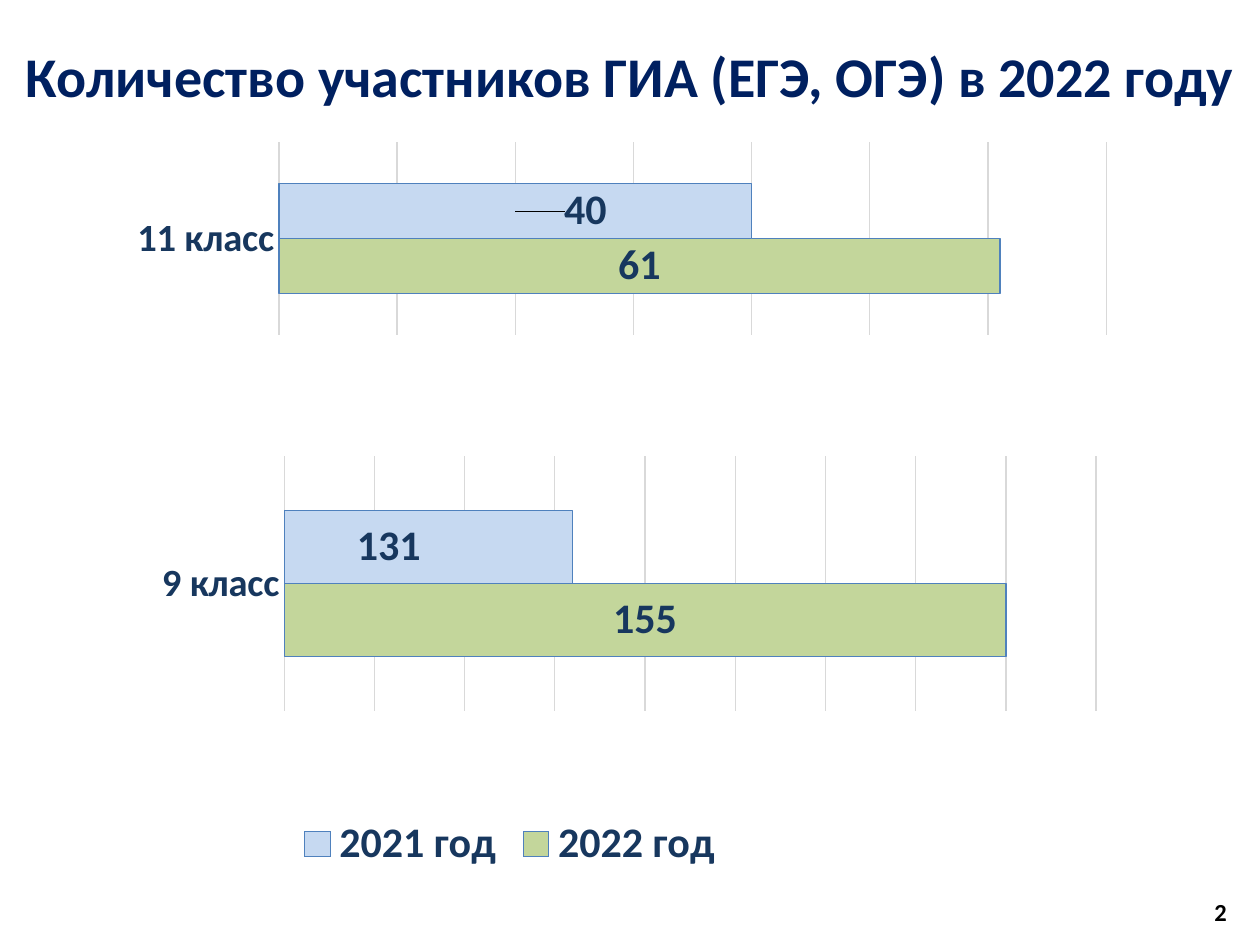
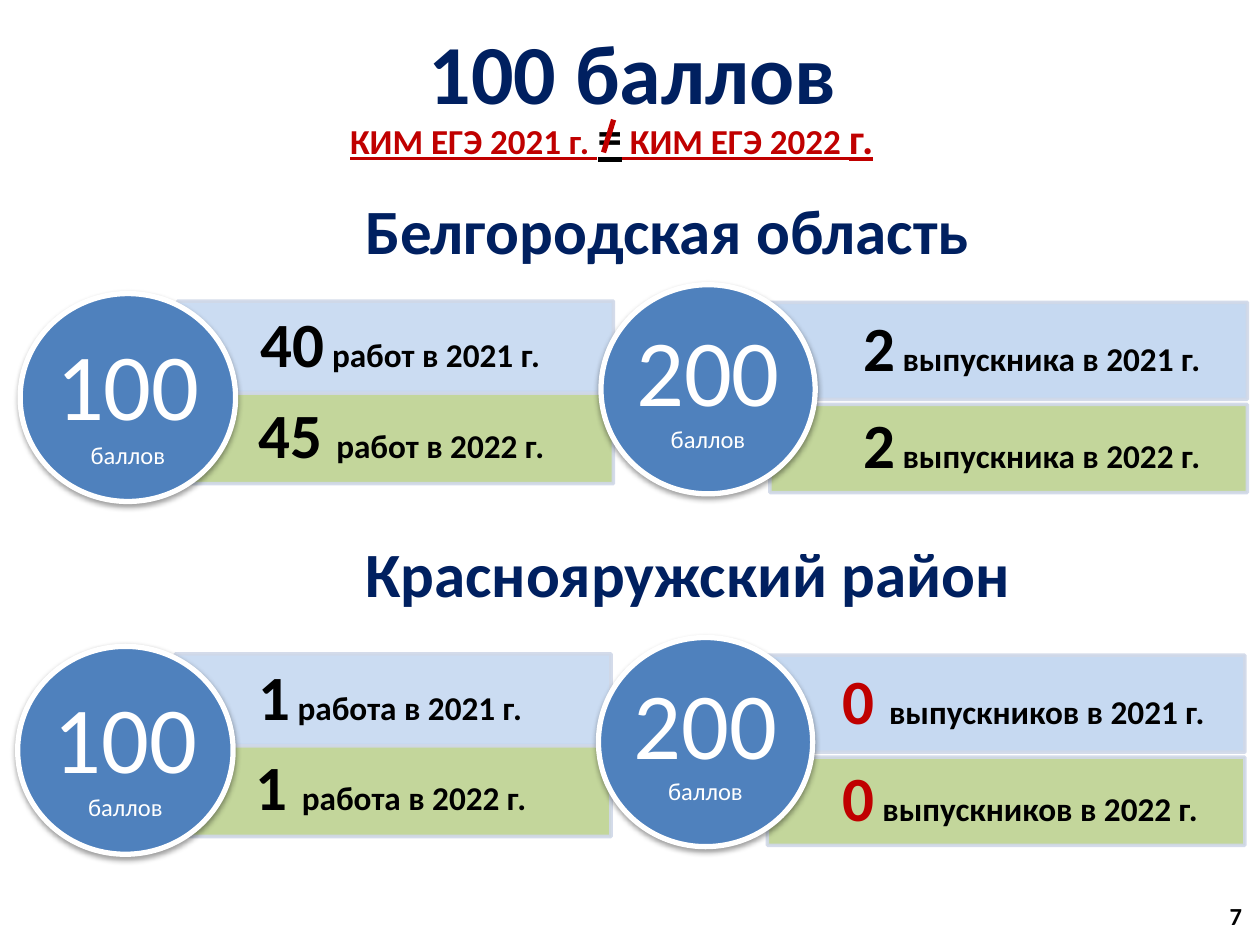
from lxml import etree
from pptx import Presentation
from pptx import util as u
from pptx.chart import data as chart_data
from pptx.dml import color as dml
from pptx.enum import chart as chart_enum
from pptx.enum import shapes, text
from pptx.oxml import parse_xml
from pptx.oxml.ns import nsdecls, qn

FONT = "Calibri"
COLOURS = {
    "navy": "002060",
    "ink": "17375E",
    "black": "000000",
    "white": "FFFFFF",
    "red": "C00000",
    "blue": "4F81BD",
    "pale_blue": "C6D9F1",
    "green": "C3D69B",
    "edge": "D0D8E8",
    "grid": "D9D9D9",
}
LEFT, CENTRE = text.PP_ALIGN.LEFT, text.PP_ALIGN.CENTER


def rgb(name):
    return dml.RGBColor.from_string(COLOURS[name])


def format_font(font, size, colour="black", bold=True, underline=False):
    font.name = FONT
    font.size = u.Pt(size)
    font.bold = bold
    font.color.rgb = rgb(colour)
    if underline:
        font.underline = True


def add_span(para, words, **style):
    span = para.add_run()
    span.text = words
    format_font(span.font, **style)


def set_alpha(fill_owner, percent):
    for colour in fill_owner.iter(qn("a:srgbClr")):
        etree.SubElement(colour, qn("a:alpha"), val=str(percent * 1000))


def manual_layout(x, y, w=None, h=None, edge=False, inner=False):
    parts = [("layoutTarget", "inner")] if inner else []
    if edge:
        parts += [("xMode", "edge"), ("yMode", "edge")]
    parts += [("x", x), ("y", y), ("w", w), ("h", h)]
    body = "".join(f'<c:{tag} val="{value}"/>' for tag, value in parts if value is not None)
    return parse_xml(f'<c:layout {nsdecls("c")}><c:manualLayout>{body}</c:manualLayout></c:layout>')


class Board:
    def __init__(self):
        self.deck = Presentation()
        self.deck.slide_width, self.deck.slide_height = u.Inches(10), u.Inches(7.5)
        self.page = None

    def start(self, title, at, size, number, number_at):
        self.page = self.deck.slides.add_slide(self.deck.slide_layouts[5])
        box = self.page.shapes.title
        box.left, box.top, box.width, box.height = map(u.Inches, at)
        frame = box.text_frame
        frame.auto_size = text.MSO_AUTO_SIZE.NONE
        frame.word_wrap = True
        frame.vertical_anchor = text.MSO_ANCHOR.MIDDLE
        frame.paragraphs[0].alignment = CENTRE
        add_span(frame.paragraphs[0], title, size=size, colour="navy")
        self.label([(number, dict(size=14))], number_at)

    def label(self, spans, at, wrap=True):
        box = self.page.shapes.add_textbox(*map(u.Inches, at))
        box.text_frame.word_wrap = wrap
        for words, style in spans:
            add_span(box.text_frame.paragraphs[0], words, **style)

    def block(self, kind, at, fill, line, weight, inset=0, align=LEFT, spacing=0.9):
        box = self.page.shapes.add_shape(kind, *map(u.Inches, at))
        box.shadow.inherit = False
        box.fill.solid()
        box.fill.fore_color.rgb = rgb(fill)
        box.line.color.rgb = rgb(line)
        box.line.width = u.Pt(weight)
        frame = box.text_frame
        frame.word_wrap = True
        frame.vertical_anchor = text.MSO_ANCHOR.MIDDLE
        frame.margin_left = u.Inches(inset)
        frame.margin_right = frame.margin_top = frame.margin_bottom = 0
        frame.paragraphs[0].alignment = align
        frame.paragraphs[0].line_spacing = spacing
        return box

    def row(self, at, fill, inset, count, words, count_colour="black", alpha=None):
        box = self.block(shapes.MSO_SHAPE.RECTANGLE, at, fill, "edge", 2, inset)
        properties = box._element.spPr
        set_alpha(properties.find(qn("a:ln")), 90)
        if alpha:
            set_alpha(properties.find(qn("a:solidFill")), alpha)
        para = box.text_frame.paragraphs[0]
        add_span(para, count, size=36, colour=count_colour)
        add_span(para, words, size=19)

    def badge(self, at, score, spacing):
        box = self.block(shapes.MSO_SHAPE.OVAL, at, "blue", "white", 3,
                         align=CENTRE, spacing=spacing)
        effects = box._element.spPr.find(qn("a:effectLst"))
        shadow = etree.SubElement(effects, qn("a:outerShdw"), blurRad="40000", dist="20000",
                                  dir="5400000", rotWithShape="0")
        etree.SubElement(shadow, qn("a:srgbClr"), val=COLOURS["black"])
        set_alpha(shadow, 38)
        para = box.text_frame.paragraphs[0]
        add_span(para, score, size=54, colour="white", bold=False)
        para.add_line_break()
        add_span(para, "баллов", size=14, colour="white", bold=False)

    def stroke(self, start, end, colour, weight):
        line = self.page.shapes.add_connector(
            shapes.MSO_CONNECTOR.STRAIGHT, *map(u.Inches, start + end))
        line.line.color.rgb = rgb(colour)
        line.line.width = u.Pt(weight)
        etree.SubElement(line._element.spPr, qn("a:effectLst"))

    def bars(self, at, category, series, scale, plot_at, label_shift, legend_at=None):
        numbers = chart_data.CategoryChartData()
        numbers.categories = [category]
        for name, value, _ in series:
            numbers.add_series(name, [value])
        chart = self.page.shapes.add_chart(
            chart_enum.XL_CHART_TYPE.BAR_CLUSTERED, *map(u.Inches, at), numbers).chart
        chart.has_title = False
        format_font(chart.font, 10, bold=False)

        categories = chart.category_axis
        categories.major_tick_mark = chart_enum.XL_TICK_MARK.NONE
        categories.format.line.fill.background()
        format_font(categories.tick_labels.font, 22, "ink")

        values = chart.value_axis
        values.minimum_scale, values.maximum_scale, values.major_unit = scale
        values.has_major_gridlines = True
        values.major_gridlines.format.line.color.rgb = rgb("grid")
        values.major_gridlines.format.line.width = u.Pt(0.75)
        values.visible = False

        plot = chart.plots[0]
        plot.gap_width = 150
        plot.overlap = 0
        plot.vary_by_categories = False
        for bar, (_, _, colour) in zip(plot.series, series):
            bar.format.fill.solid()
            bar.format.fill.fore_color.rgb = rgb(colour)
            bar.format.line.color.rgb = rgb("blue")
            bar.format.line.width = u.Pt(0.75)
            bar.data_labels.show_value = True
            bar.data_labels.position = chart_enum.XL_LABEL_POSITION.CENTER
            format_font(bar.data_labels.font, 24, "ink")

        shifted = plot.series[1].points[0].data_label
        format_font(shifted.font, 24, "ink")
        shifted.position = chart_enum.XL_LABEL_POSITION.CENTER
        plot.series[1]._element.find(".//" + qn("c:dLbl")).insert(
            1, manual_layout(label_shift, 0))

        area = chart._chartSpace.find(".//" + qn("c:plotArea"))
        for layout in area.findall(qn("c:layout")):
            area.remove(layout)
        area.insert(0, manual_layout(*plot_at, edge=True, inner=True))

        chart.has_legend = legend_at is not None
        if legend_at:
            legend = chart.legend
            legend.position = chart_enum.XL_LEGEND_POSITION.BOTTOM
            legend.include_in_layout = False
            format_font(legend.font, 24, "ink")
            element = legend._element
            for layout in element.findall(qn("c:layout")):
                element.remove(layout)
            element.find(qn("c:legendPos")).addnext(manual_layout(*legend_at, edge=True))


def participants(board):
    board.start("Количество участников ГИА (ЕГЭ, ОГЭ) в 2022 году",
                (0, 0.13, 10, 0.94), 32, "2", (9.54, 7.07, 0.31, 0.4))
    board.bars((1.06, 1.07, 7.96, 1.89), "11 класс",
               [("2022 год", 61, "green"), ("2021 год", 40, "pale_blue")],
               (0, 70, 10), (0.145, 0.031, 0.825, 0.81), 0.07)
    board.bars((-0.03, 3.51, 9, 3.56), "9 класс",
               [("2022 год", 155, "green"), ("2021 год", 131, "pale_blue")],
               (115, 160, 5), (0.254, 0.031, 0.716, 0.568), -0.035, (0.26, 0.82))


def score_block(board, dx, dy, works, graduates):
    def place(left, top, width, height):
        return left + dx, top + dy, width, height

    work_2021, work_2022 = works
    graduate_2021, graduate_2022 = graduates
    board.row(place(1.51, 3.11, 3.36, 0.73), "green", 0.54, *work_2022)
    board.row(place(1.41, 2.39, 3.46, 0.73), "pale_blue", 0.66, *work_2021, alpha=90)
    board.badge(place(0.16, 2.33, 1.71, 1.65), "100", 1.0)
    board.row(place(6.11, 3.21, 3.79, 0.7), "green", *graduate_2022)
    board.row(place(6.11, 2.4, 3.79, 0.77), "pale_blue", *graduate_2021)
    board.badge(place(4.77, 2.26, 1.7, 1.66), "200", 0.9)


def top_scores(board):
    board.start("100 баллов", (0.04, -0.06, 9.96, 1.25), 48, "7", (9.66, 7.1, 0.48, 0.4))
    red = dict(size=20, colour="red", underline=True)
    board.label([("КИМ ЕГЭ 2021 г. ", red),
                 ("=", dict(size=28, underline=True)),
                 (" КИМ ЕГЭ 2022 ", red),
                 ("г.", {**red, "size": 24})], (2.68, 0.79, 6.13, 0.57))
    board.stroke((4.87, 0.95), (4.79, 1.21), "red", 3)

    region = dict(size=36, colour="navy")
    board.label([("Белгородская область", region)], (2.8, 1.47, 5.03, 0.71), wrap=False)
    board.label([("Краснояружский район", region)], (2.8, 4.19, 5.37, 0.71), wrap=False)
    score_block(board, 0, 0,
                [("40", " работ в 2021 г."), ("45 ", "работ в 2022 г.")],
                [(0.74, "2", " выпускника в 2021 г."), (0.74, "2", " выпускника в 2022 г.")])
    score_block(board, -0.02, 2.8,
                [("1", " работа в 2021 г."), ("1 ", "работа в 2022 г.")],
                [(0.6, "0 ", "выпускников в 2021 г.", "red"),
                 (0.6, "0", " выпускников в 2022 г.", "red")])


def main():
    board = Board()
    participants(board)
    top_scores(board)
    board.deck.save("out.pptx")


if __name__ == "__main__":
    main()
